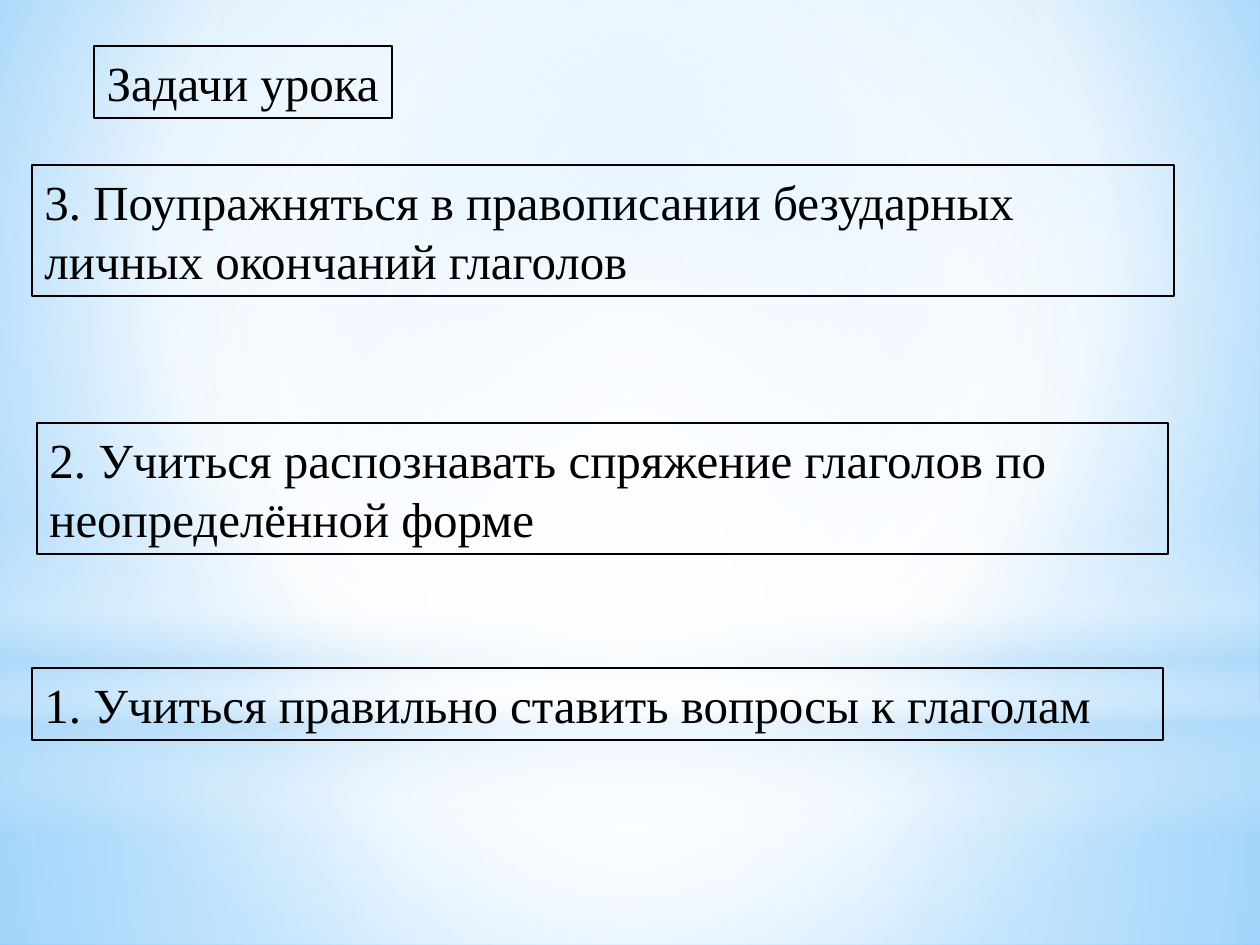
from lxml import etree
from pptx import Presentation
from pptx.dml.color import RGBColor
from pptx.enum.shapes import MSO_SHAPE
from pptx.enum.text import MSO_ANCHOR, MSO_AUTO_SIZE, PP_ALIGN
from pptx.oxml.ns import qn
from pptx.util import Emu, Pt

EMU_PER_PX = 914400 / 126
SLIDE_W, SLIDE_H = 1260, 945
TITLE_ONLY = 5
RECTANGLE, ELLIPSE = MSO_SHAPE.RECTANGLE, MSO_SHAPE.OVAL
TOP = MSO_ANCHOR.TOP
LEFT = PP_ALIGN.LEFT
FIXED, GROW = MSO_AUTO_SIZE.NONE, MSO_AUTO_SIZE.SHAPE_TO_FIT_TEXT

FONT, FONT_SIZE = "Times New Roman", 28
COLORS = {
    "ink": "000000",
    "white": "FFFFFF",
    "mist": "B4DCFA",
    "sky": "9ED5FF",
    "deep_sky": "5BB9FF",
}
CENTER = (50, 50, 50, 50)

# Stops are (position %, colour, opacity %).
SKY_STOPS = [(0, "sky", 100), (60, "white", 100), (100, "deep_sky", 100)]
GROUND_STOPS = [(0, "white", 91), (37, "white", 76), (100, "mist", 79)]
AIR_STOPS = [(0, "white", 89), (48, "white", 62), (100, "mist", 79)]
HORIZON_STOPS = [(0, "white", 0), (29, "white", 30), (45, "mist", 40),
                 (55, "white", 26), (65, "mist", 60), (100, "white", 0)]
GLOW_STOPS = [(0, "white", 100), (56, "white", 0)]

# Preset, top, height, stops, focus; every layer spans the slide width.
LAYERS = [
    (RECTANGLE, 703, 242, GROUND_STOPS, CENTER),
    (RECTANGLE, 0, 703, AIR_STOPS, CENTER),
    (RECTANGLE, 519, 315, HORIZON_STOPS, None),
    (ELLIPSE, 220, 703, GLOW_STOPS, CENTER),
]

TITLE = "Задачи урока"
TITLE_BOX = (94, 46, 298, 72)
TASKS = [
    ("3. Поупражняться в правописании безударных личных окончаний глаголов",
     (32, 165, 1142, 131)),
    ("2. Учиться распознавать спряжение глаголов по неопределённой форме",
     (37, 423, 1131, 131)),
    ("1. Учиться правильно ставить вопросы к глаголам",
     (32, 668, 1131, 72)),
]


def px(length):
    return Emu(round(length * EMU_PER_PX))


def color(name):
    return RGBColor.from_string(COLORS[name])


def set_gradient(fill, owner, stops, focus=None):
    """Fill owner's first gradient: circular around focus, else downwards."""
    fill.gradient()
    gradient = next(owner.iter(qn("a:gradFill")))
    for child in list(gradient):
        gradient.remove(child)
    stop_list = etree.SubElement(gradient, qn("a:gsLst"))
    for position, name, opacity in stops:
        stop = etree.SubElement(stop_list, qn("a:gs"), pos=str(position * 1000))
        tint = etree.SubElement(stop, qn("a:srgbClr"), val=COLORS[name])
        if opacity < 100:
            etree.SubElement(tint, qn("a:alpha"), val=str(opacity * 1000))
    if focus:
        circle = etree.SubElement(gradient, qn("a:path"), path="circle")
        sides = {side: str(share * 1000) for side, share in zip("ltrb", focus)}
        etree.SubElement(circle, qn("a:fillToRect"), **sides)
    else:
        etree.SubElement(gradient, qn("a:lin"), ang="5400000", scaled="0")


def add_layer(slide, preset, top, height, stops, focus):
    layer = slide.shapes.add_shape(preset, 0, px(top), px(SLIDE_W), px(height))
    layer.shadow.inherit = False
    layer.line.fill.background()
    set_gradient(layer.fill, layer.element, stops, focus)


def format_box(box, text, bounds, auto_size):
    box.left, box.top, box.width, box.height = map(px, bounds)
    box.line.color.rgb = color("ink")
    box.line.width = Pt(1)
    frame = box.text_frame
    frame.text = text
    frame.word_wrap = True
    frame.auto_size = auto_size
    frame.vertical_anchor = TOP
    paragraph = frame.paragraphs[0]
    paragraph.alignment = LEFT
    font = paragraph.runs[0].font
    font.name = FONT
    font.size = Pt(FONT_SIZE)
    font.color.rgb = color("ink")


def add_title(slide):
    """Format the title and bring it in front of the background layers."""
    title = slide.shapes.title
    format_box(title, TITLE, TITLE_BOX, FIXED)
    # The line fills the box, so the right inset is given up to keep it whole.
    title.text_frame.margin_right = 0
    title.element.getparent().append(title.element)


def add_task(slide, text, bounds):
    format_box(slide.shapes.add_textbox(*map(px, bounds)), text, bounds, GROW)


def main():
    deck = Presentation()
    deck.slide_width, deck.slide_height = px(SLIDE_W), px(SLIDE_H)
    slide = deck.slides.add_slide(deck.slide_layouts[TITLE_ONLY])
    set_gradient(slide.background.fill, slide.element, SKY_STOPS, (20, 10, 20, 60))
    for layer in LAYERS:
        add_layer(slide, *layer)
    add_title(slide)
    for text, bounds in TASKS:
        add_task(slide, text, bounds)
    deck.save("out.pptx")


if __name__ == "__main__":
    main()
